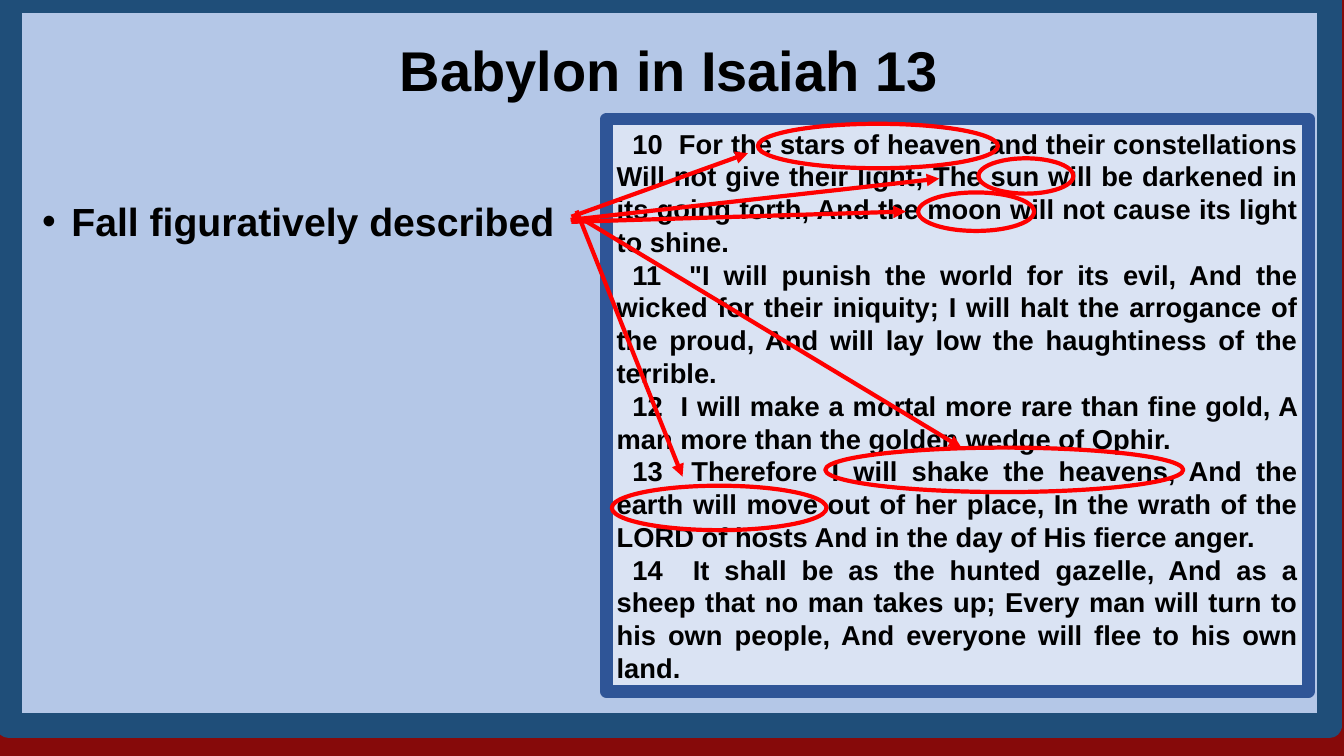
from lxml import etree
from pptx import Presentation
from pptx.dml.color import RGBColor
from pptx.enum import shapes, text
from pptx.oxml.ns import qn
from pptx.util import Cm, Pt

MAROON = RGBColor(0x86, 0x0A, 0x0A)
SKY = RGBColor(0xB4, 0xC7, 0xE7)
NAVY = RGBColor(0x1F, 0x4E, 0x79)
PALE = RGBColor(0xDA, 0xE3, 0xF3)
BLUE = RGBColor(0x2F, 0x55, 0x97)
RED = RGBColor(0xFF, 0, 0)
BLACK = RGBColor(0, 0, 0)

VERSES = [
    "10  For the stars of heaven and their constellations Will not give their "
    "light; The sun will be darkened in its going forth, And the moon will not "
    "cause its light to shine.",
    "11  \"I will punish the world for its evil, And the wicked for their "
    "iniquity; I will halt the arrogance of the proud, And will lay low the "
    "haughtiness of the terrible.",
    "12  I will make a mortal more rare than fine gold, A man more than the "
    "golden wedge of Ophir.",
    "13  Therefore I will shake the heavens, And the earth will move out of her "
    "place, In the wrath of the LORD of hosts And in the day of His fierce anger.",
    "14  It shall be as the hunted gazelle, And as a sheep that no man takes up; "
    "Every man will turn to his own people, And everyone will flee to his own land.",
]

# Left, top, width, height in cm
RINGS = [
    (19.1, 3.12, 6.05, 1.12),    # stars of heaven
    (24.66, 3.99, 2.39, 0.89),   # sun
    (23.14, 4.85, 2.92, 0.97),   # moon
    (20.8, 11.28, 9.02, 1.12),   # shake the heavens
    (15.42, 12.24, 5.41, 1.12),  # earth will move
]
# Start x, y and end x, y in cm
ARROWS = [
    (14.4, 5.46, 18.85, 3.86),
    (14.38, 5.54, 23.67, 4.5),
    (14.4, 5.59, 22.83, 5.33),
    (14.66, 5.51, 24.23, 11.28),
    (14.53, 5.31, 17.2, 12.01),
]


def style(frame, size, align):
    for para in frame.paragraphs:
        para.alignment = align
        for run in para.runs:
            font = run.font
            font.name, font.size, font.bold = "Arial", Pt(size), True
            font.color.rgb = BLACK


def add_box(slide, kind, box, fill, line, width):
    shape = slide.shapes.add_shape(kind, *map(Cm, box))
    shape.shadow.inherit = False
    if fill is None:
        shape.fill.background()
    else:
        shape.fill.solid()
        shape.fill.fore_color.rgb = fill
    shape.line.color.rgb = line
    shape.line.width = Pt(width)
    return shape


def add_arrow(slide, ends):
    arrow = slide.shapes.add_connector(
        shapes.MSO_CONNECTOR.STRAIGHT, *map(Cm, ends))
    arrow.line.color.rgb = RED
    arrow.line.width = Pt(3)
    etree.SubElement(arrow.line._get_or_add_ln(), qn("a:tailEnd"), type="triangle")
    etree.SubElement(arrow._element.spPr, qn("a:effectLst"))


def set_title(slide, words):
    title = slide.shapes.title
    title.left, title.top, title.width, title.height = map(
        Cm, (0.66, 0.76, 32.39, 1.96))
    frame = title.text_frame
    frame.text = words
    frame.vertical_anchor = text.MSO_ANCHOR.MIDDLE
    style(frame, 40, text.PP_ALIGN.CENTER)
    # Bring the title in front of the frame
    slide.shapes._spTree.append(title._element)


def add_point(slide, words):
    box = slide.shapes.add_textbox(*map(Cm, (0.81, 4.85, 14.07, 1.45)))
    frame = box.text_frame
    frame.word_wrap = True
    frame.text = words
    style(frame, 28, text.PP_ALIGN.LEFT)
    props = frame.paragraphs[0]._p.get_or_add_pPr()
    props.set("marL", str(Cm(0.74)))
    props.set("indent", str(-Cm(0.74)))
    etree.SubElement(props, qn("a:buFont"), typeface="Arial")
    etree.SubElement(props, qn("a:buChar"), char="•")


def add_verses(slide):
    panel = add_box(slide, shapes.MSO_SHAPE.RECTANGLE,
                    (15.29, 3, 17.68, 14.43), PALE, BLUE, 9)
    frame = panel.text_frame
    frame.word_wrap = True
    frame.vertical_anchor = text.MSO_ANCHOR.MIDDLE
    frame.text = "\n".join(VERSES)
    style(frame, 19.5, text.PP_ALIGN.JUSTIFY)
    for para in frame.paragraphs:
        para.line_spacing = Pt(23.4)
        para._p.get_or_add_pPr().set("indent", str(Cm(0.4)))


def main():
    deck = Presentation()
    deck.slide_width, deck.slide_height = Cm(33.87), Cm(19.05)
    slide = deck.slides.add_slide(deck.slide_layouts[5])

    # Backdrop and frame
    slide.background.fill.solid()
    slide.background.fill.fore_color.rgb = MAROON
    add_box(slide, shapes.MSO_SHAPE.RECTANGLE,
            (0.23, 0, 33.27, 18.29), SKY, NAVY, 18)

    # Wording
    set_title(slide, "Babylon in Isaiah 13")
    add_verses(slide)
    add_point(slide, "Fall figuratively described")

    # Marked phrases and the arrows to them
    for ring in RINGS:
        add_box(slide, shapes.MSO_SHAPE.OVAL, ring, None, RED, 3)
    for ends in ARROWS:
        add_arrow(slide, ends)

    deck.save("out.pptx")


if __name__ == "__main__":
    main()
